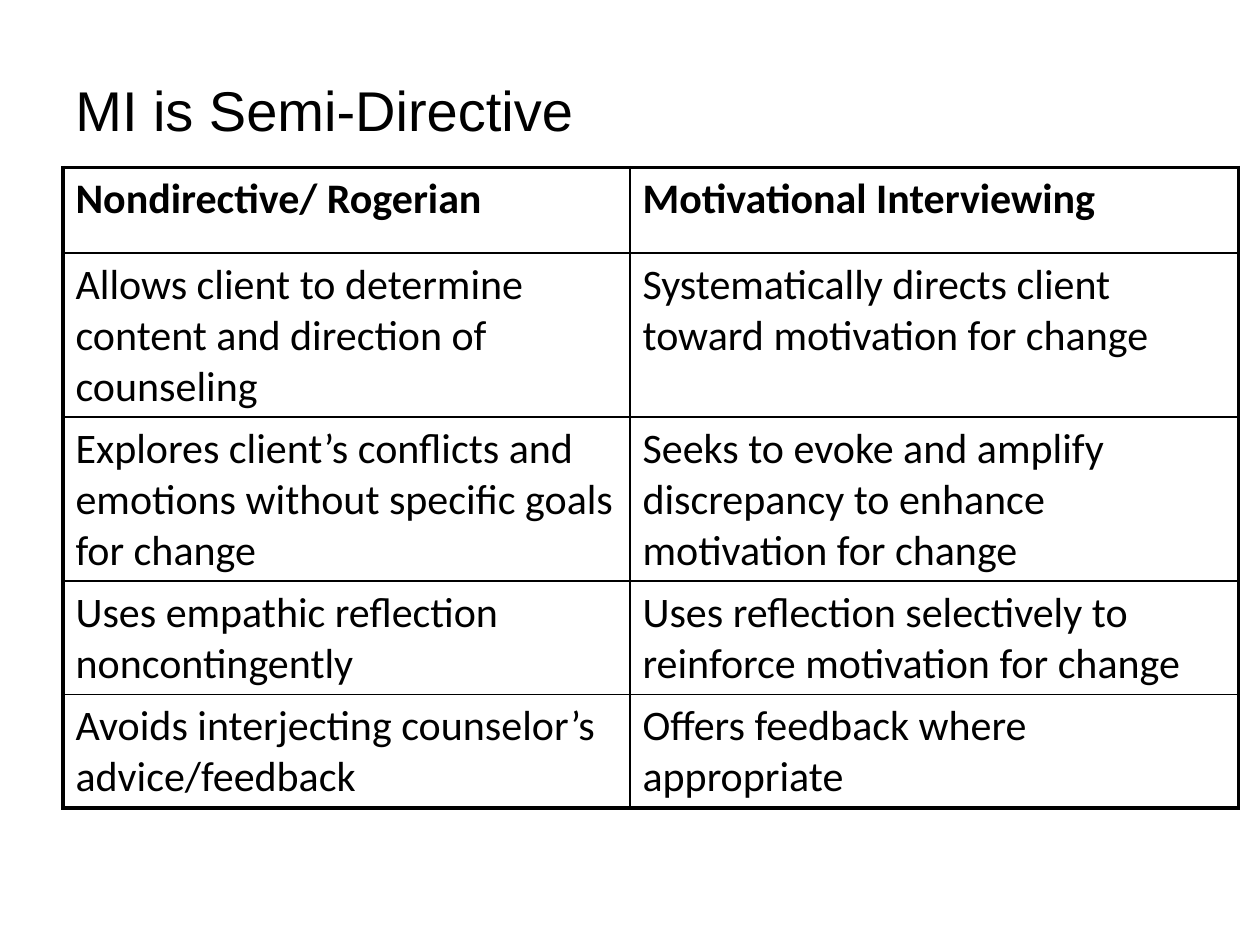
from lxml.etree import SubElement
from pptx import Presentation
from pptx.dml.color import RGBColor
from pptx.enum.text import MSO_ANCHOR
from pptx.oxml.ns import qn
from pptx.util import Inches, Pt

TITLE = "MI is Semi-Directive"
ROWS = [
    ("Nondirective/ Rogerian", "Motivational Interviewing"),
    ("Allows client to determine content and direction of counseling",
     "Systematically directs client toward motivation for change"),
    ("Explores client’s conflicts and emotions without specific goals for change",
     "Seeks to evoke and amplify discrepancy to enhance motivation for change"),
    ("Uses empathic reflection noncontingently",
     "Uses reflection selectively to reinforce motivation for change"),
    ("Avoids interjecting counselor’s advice/feedback",
     "Offers feedback where appropriate"),
]
COL_WIDTHS = (4.5, 4.83)
ROW_HEIGHTS = (0.68, 1.23, 1.23, 0.85, 0.85)
LEFT, TITLE_TOP, TABLE_TOP = 0.5, 0.5, 1.33

INK = "000000"
THEME = {
    "title": {"name": "Arial", "size": Pt(32), "bold": False},
    "header": {"name": "Calibri", "size": Pt(24), "bold": True},
    "body": {"name": "Calibri", "size": Pt(24), "bold": False},
    "ink": INK,
    "outer_line": Pt(2.25),
    "inner_line": Pt(1),
}


def write(tf, text, style):
    r = tf.paragraphs[0].add_run()
    r.text = text
    for name, value in THEME[style].items():
        setattr(r.font, name, value)
    r.font.color.rgb = RGBColor.from_string(THEME["ink"])


def set_borders(cell, outer_sides):
    """Draw all four borders, heavy on the sides along the table's edge."""
    tc_pr = cell._tc.get_or_add_tcPr()
    for i, (side, is_outer) in enumerate(outer_sides.items()):
        width = THEME["outer_line" if is_outer else "inner_line"]
        ln = SubElement(tc_pr, qn(f"a:{side}"), w=str(width))
        fill = SubElement(ln, qn("a:solidFill"))
        SubElement(fill, qn("a:srgbClr"), val=THEME["ink"])
        tc_pr.remove(ln)
        tc_pr.insert(i, ln)  # borders come before the cell fill


def add_title(slide):
    box = slide.shapes.add_textbox(
        Inches(LEFT), Inches(TITLE_TOP), Inches(8.67), Inches(0.83))
    tf = box.text_frame
    tf.word_wrap = True
    tf.vertical_anchor = MSO_ANCHOR.TOP
    tf.margin_top = Inches(0.1)
    write(tf, TITLE, "title")


def add_comparison(slide):
    table = slide.shapes.add_table(
        len(ROWS), len(COL_WIDTHS), Inches(LEFT), Inches(TABLE_TOP),
        Inches(sum(COL_WIDTHS)), Inches(sum(ROW_HEIGHTS))).table
    table.first_row = table.horz_banding = False
    for column, width in zip(table.columns, COL_WIDTHS):
        column.width = Inches(width)
    for row, height in zip(table.rows, ROW_HEIGHTS):
        row.height = Inches(height)
    last_row, last_col = len(ROWS) - 1, len(COL_WIDTHS) - 1
    for i, texts in enumerate(ROWS):
        for j, text in enumerate(texts):
            cell = table.cell(i, j)
            cell.fill.background()
            write(cell.text_frame, text, "body" if i else "header")
            set_borders(cell, {"lnL": j == 0, "lnR": j == last_col,
                               "lnT": i == 0, "lnB": i == last_row})


def main():
    prs = Presentation()
    prs.slide_width, prs.slide_height = Inches(10), Inches(7.5)
    slide = prs.slides.add_slide(prs.slide_layouts[6])
    add_title(slide)
    add_comparison(slide)
    prs.save("out.pptx")


if __name__ == "__main__":
    main()
